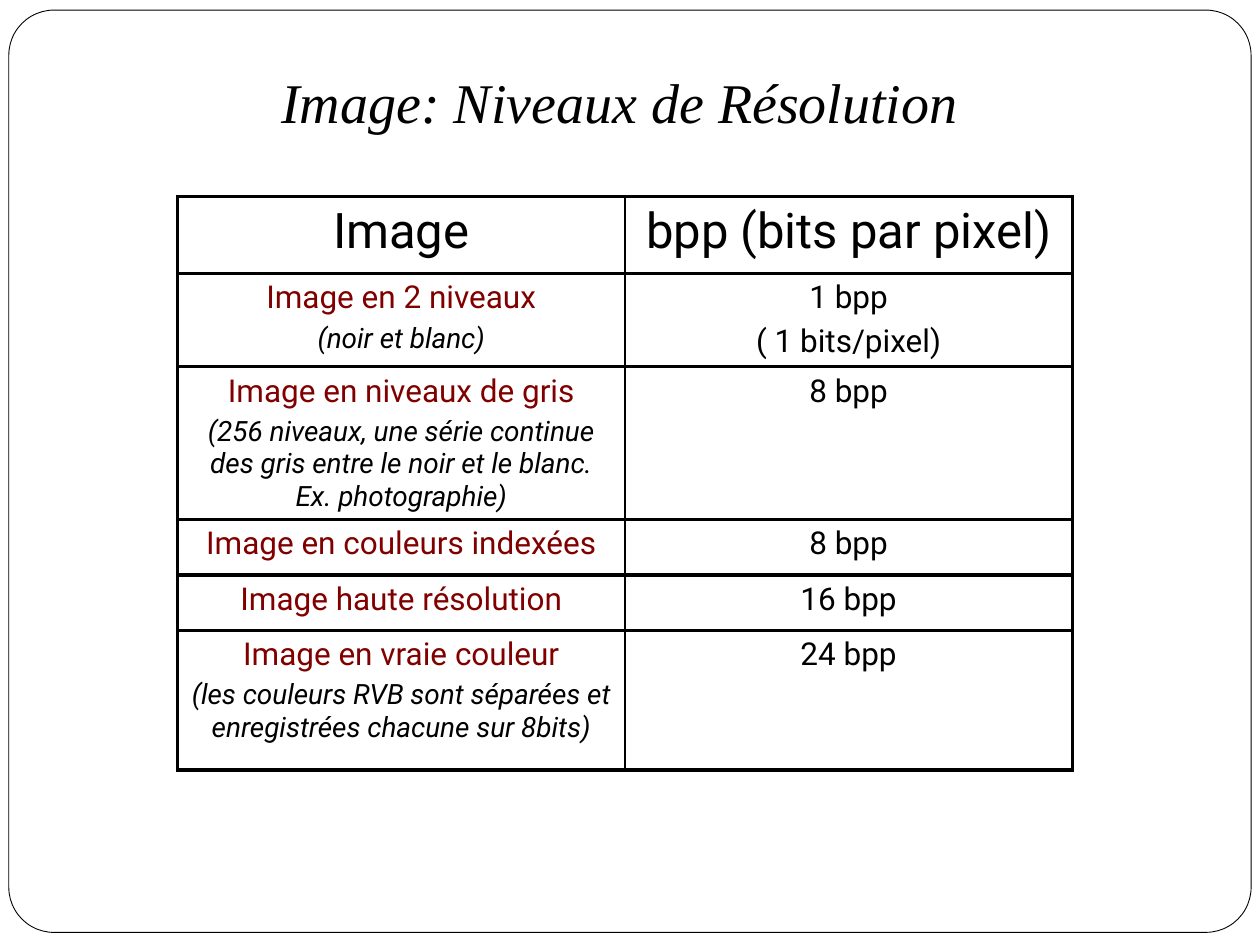
from lxml.etree import SubElement
from pptx import Presentation
from pptx.dml.color import RGBColor
from pptx.enum.shapes import MSO_SHAPE as Shape
from pptx.enum.text import MSO_ANCHOR as Anchor, PP_ALIGN as Align
from pptx.oxml.ns import qn
from pptx.util import Inches, Pt

BLACK = RGBColor(0x00, 0x00, 0x00)
WHITE = RGBColor(0xFF, 0xFF, 0xFF)
MAROON = RGBColor(0x80, 0x00, 0x00)

HEADING = (28, BLACK, False)
NAME = (18, MAROON, False)
DETAIL = (16, BLACK, True)
VALUE = (18, BLACK, False)

ROWS = [
    (0.61, [("Image", HEADING)], [("bpp (bits par pixel)", HEADING)]),
    (0.74, [("Image en 2 niveaux", NAME), ("(noir et blanc)", DETAIL)],
     [("1 bpp", VALUE), ("( 1 bits/pixel)", VALUE)]),
    (1.21, [("Image en niveaux de gris", NAME),
            ("(256 niveaux, une série continue des gris entre le noir et le blanc. "
             "Ex. photographie)", DETAIL)],
     [("8 bpp", VALUE)]),
    (0.44, [("Image en couleurs indexées", NAME)], [("8 bpp", VALUE)]),
    (0.44, [("Image haute résolution", NAME)], [("16 bpp", VALUE)]),
    (1.11, [("Image en vraie couleur", NAME),
            ("(les couleurs RVB sont séparées et enregistrées chacune sur 8bits)", DETAIL)],
     [("24 bpp", VALUE)]),
]


class Deck:
    """Holds the style and the current slide."""

    title_font = "Times New Roman"
    body_font = "Roboto"
    thick, thin = 2.25, 1

    def __init__(self, prs):
        self.s = prs.slides.add_slide(prs.slide_layouts[5])

    def format(self, p, font, size, color, italic):
        p.alignment = Align.CENTER
        for r in p.runs:
            r.font.name = font
            r.font.size = Pt(size)
            r.font.color.rgb = color
            r.font.italic = italic

    def title(self, text, x, y, w, h):
        sp = self.s.shapes.title
        sp.left, sp.top, sp.width, sp.height = map(Inches, (x, y, w, h))
        tf = sp.text_frame
        tf.text = text
        tf.word_wrap = True
        tf.vertical_anchor = Anchor.BOTTOM
        tf.margin_bottom = Inches(0.1)
        self.format(tf.paragraphs[0], self.title_font, 32, BLACK, True)

    def frame(self, x, y, w, h):
        sp = self.s.shapes.add_shape(Shape.ROUNDED_RECTANGLE, *map(Inches, (x, y, w, h)))
        sp.adjustments[0] = 0.049
        sp.shadow.inherit = False
        sp.fill.solid()
        sp.fill.fore_color.rgb = WHITE
        sp.line.color.rgb = BLACK
        sp.line.width = Pt(0.5)
        self.s.shapes.title.element.addprevious(sp.element)

    def borders(self, cell, **widths):
        props = cell._tc.get_or_add_tcPr()
        for side, width in widths.items():
            ln = SubElement(props, qn(f"a:ln{side}"), w=str(Pt(width)))
            fill = SubElement(ln, qn("a:solidFill"))
            SubElement(fill, qn("a:srgbClr"), val=str(BLACK))

    def cell(self, cell, lines):
        tf = cell.text_frame
        tf.text = "\n".join(text for text, _ in lines)
        for i, (p, (_, style)) in enumerate(zip(tf.paragraphs, lines)):
            self.format(p, self.body_font, *style)
            p.space_before = Pt(0.2 * style[0] if i else 0)

    def table(self, rows, x, y, w):
        height = sum(row[0] for row in rows)
        shape = self.s.shapes.add_table(len(rows), 2, *map(Inches, (x, y, w, height)))
        table = shape.table
        for i, (row_height, *cells) in enumerate(rows):
            table.rows[i].height = Inches(row_height)
            for j, lines in enumerate(cells):
                cell = table.cell(i, j)
                self.cell(cell, lines)
                self.borders(cell, L=self.thin if j else self.thick,
                             R=self.thick if j else self.thin,
                             T=self.thick, B=self.thick)
                cell.fill.background()


def main():
    prs = Presentation()
    prs.slide_width, prs.slide_height = Inches(10), Inches(7.5)
    deck = Deck(prs)
    deck.frame(0.07, 0.08, 9.86, 7.32)
    deck.title("Image: Niveaux de Résolution", 0.67, 0.33, 8.5, 0.84)
    deck.table(ROWS, 1.41, 1.56, 7.1)
    prs.save("out.pptx")


if __name__ == "__main__":
    main()
